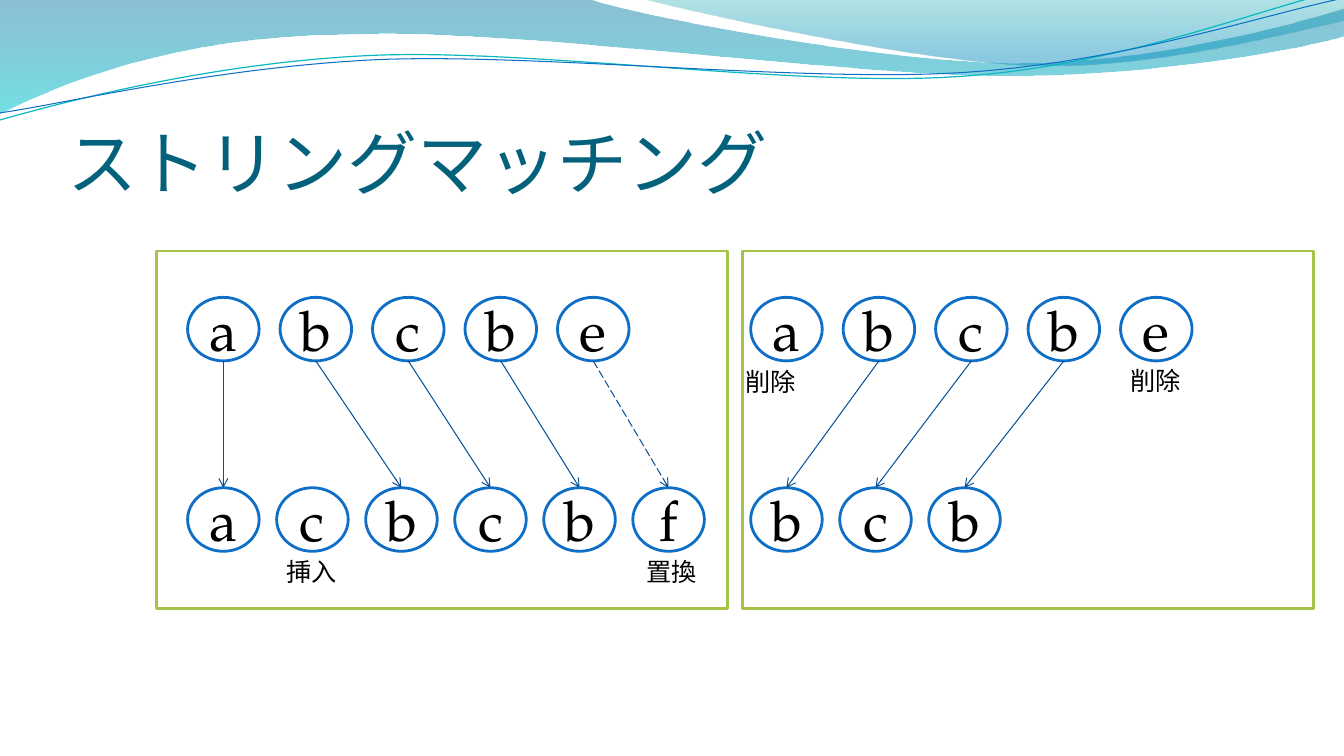
"""Build the string matching slide: two panels of aligned letters."""
from dataclasses import dataclass
from typing import Any, NamedTuple, Optional

from lxml.etree import SubElement
from pptx import Presentation
from pptx.dml.color import RGBColor
from pptx.enum.dml import MSO_LINE as Dash
from pptx.enum.shapes import MSO_CONNECTOR as Connector, MSO_SHAPE as Preset
from pptx.enum.text import MSO_ANCHOR as Anchor, MSO_AUTO_SIZE as Fit, PP_ALIGN as Align
from pptx.oxml.ns import qn
from pptx.util import Pt

BODY_FONT = "TeX Gyre Pagella"
CIRCLE_W, CIRCLE_H = 51.1, 45.4
TOP_Y, BOTTOM_Y = 212.4, 348.4
TOP_STEP, BOTTOM_STEP = 66.05, 63.6
PANEL_Y, PANEL_W, PANEL_H = 179.3, 408.2, 255.2

Point = tuple[float, float]


class Stop(NamedTuple):
    position: float
    color: str
    opacity: int


class Link(NamedTuple):
    source: int
    target: int
    dashed: bool = False


class Note(NamedTuple):
    text: str
    x: float
    y: float


@dataclass
class Wave:
    start: Point
    pieces: list[list[Point]]
    stops: tuple[Stop, ...] = ()
    line: Optional[tuple[str, float]] = None


@dataclass
class Panel:
    x: float
    row_x: float
    top: str
    bottom: str
    links: list[Link]
    notes: list[Note]


WAVES = [
    Wave((0, 0), [
        [(422.6, 0)],
        [(456.5, 12.2), (637.2, 45.4), (727.9, 45.4)],
        [(819.4, 45.4), (920.2, 18.7), (960, 6.5)],
        [(961, 25.9)],
        [(943.9, 31.7), (835.2, 54.7), (715.7, 54.4)],
        [(596.9, 54), (366.5, 20.2), (247, 24.8)],
        [(123.8, 25.9), (43.9, 59.8), (0, 81.4)],
    ], stops=(Stop(0, "0074A1", 45), Stop(1, "00C6CF", 55))),
    Wave((460, 0), [
        [(488.9, 7.9), (654.5, 44.6), (738, 46.8)],
        [(821.5, 49.7), (923, 23), (960, 15.1)],
        [(960, 0)],
    ], stops=(Stop(0, "00A1A9", 30), Stop(0.8, "008BBF", 45))),
    Wave((0, 85.7), [
        [(46, 72.7), (151.9, 44.6), (265.7, 39.6)],
        [(379.4, 34.6), (568.8, 62.6), (684, 54.7)],
        [(799.2, 47.5), (901.4, 5.8), (958.3, -7.2)],
    ], line=("0AB8BF", 0.85)),
    Wave((0, 80.6), [
        [(45.4, 74.2), (157, 47.5), (272.2, 42.5)],
        [(386.6, 38.2), (573.1, 59), (687.6, 51.8)],
        [(802.8, 44.6), (903.6, 10.1), (960, -1.4)],
    ], line=("0F6FC6", 0.75)),
]

PANELS = [
    Panel(111.6, 134, "abcbe", "acbcbf",
          [Link(0, 0), Link(1, 2), Link(2, 3), Link(3, 4), Link(4, 5, dashed=True)],
          [Note("挿入", 197.7, 393.8), Note("置換", 454.6, 393.8)]),
    Panel(530.2, 536.2, "abcbe", "bcb",
          [Link(1, 0), Link(2, 1), Link(3, 2)],
          [Note("削除", 525.6, 257.8), Note("削除", 800.6, 257.3)]),
]


def rgb(value: str) -> RGBColor:
    return RGBColor.from_string(value)


def assign(target: Any, values: dict[str, Any]) -> None:
    for name, value in values.items():
        setattr(target, name, value)


def set_line(line: Any, color: str, width: float) -> None:
    line.color.rgb = rgb(color)
    line.width = Pt(width)


def write(para: Any, text: str, size: float, font: str = BODY_FONT, color: str = "000000") -> None:
    span = para.add_run()
    span.text = text
    assign(span.font, {"size": Pt(size), "name": font})
    span.font.color.rgb = rgb(color)


def bend(shape: Any, pieces: list[list[Point]]) -> None:
    segments = iter(list(shape._element.spPr.iter(qn("a:lnTo"))))
    for piece in pieces:
        first, *others = [next(segments) for _ in piece]
        if others:
            first.tag = qn("a:cubicBezTo")
        for other in others:
            first.append(other[0])
            other.getparent().remove(other)


def curve_outline(page: Any, wave: Wave) -> Any:
    points = [wave.start, *(point for piece in wave.pieces for point in piece)]
    vertices = [(Pt(x), Pt(y)) for x, y in points]
    builder = page.shapes.build_freeform(*vertices[0])
    builder.add_line_segments(vertices[1:], close=bool(wave.stops))
    shape = builder.convert_to_shape()
    bend_path = shape._element.spPr.find(f".//{qn('a:path')}")
    for segment, piece in group_segments(bend_path, wave.pieces):
        if len(piece) == 3:
            replace_with_curve(bend_path, segment)
    return shape


def group_segments(outline: Any, pieces: list[list[Point]]) -> list[tuple[list[Any], list[Point]]]:
    segments = iter(outline.findall(qn("a:lnTo")))
    return [([next(segments) for _ in piece], piece) for piece in pieces]


def replace_with_curve(outline: Any, segments: list[Any]) -> None:
    curve = SubElement(outline, qn("a:cubicBezTo"))
    segments[0].addprevious(curve)
    for segment in segments:
        curve.append(segment[0])
        outline.remove(segment)


def draw_wave(page: Any, wave: Wave) -> None:
    shape = curve_outline(page, wave)
    shape.shadow.inherit = False
    if wave.line:
        shape.fill.background()
        set_line(shape.line, *wave.line)
        return
    shape.line.fill.background()
    shape.fill.gradient()
    shape.fill.gradient_angle = 270
    for mark, stop in zip(shape.fill.gradient_stops, wave.stops):
        mark.color.rgb = rgb(stop.color)
        mark.position = stop.position
    colors = shape._element.spPr.iter(qn("a:srgbClr"))
    for color, stop in zip(colors, wave.stops):
        SubElement(color, qn("a:alpha"), val=str(stop.opacity * 1000))


def draw_shape(page: Any, preset: Any, x: float, y: float, width: float, height: float, color: str) -> Any:
    shape = page.shapes.add_shape(preset, Pt(x), Pt(y), Pt(width), Pt(height))
    shape.shadow.inherit = False
    shape.fill.solid()
    shape.fill.fore_color.rgb = rgb("FFFFFF")
    set_line(shape.line, color, 2)
    return shape


def draw_row(page: Any, letters: str, x: float, y: float, step: float) -> None:
    for index, letter in enumerate(letters):
        circle = draw_shape(page, Preset.OVAL, x + index * step, y, CIRCLE_W, CIRCLE_H, "0F6FC6")
        circle.text_frame.vertical_anchor = Anchor.MIDDLE
        para = circle.text_frame.paragraphs[0]
        para.alignment = Align.CENTER
        write(para, letter, 40)


def draw_link(page: Any, link: Link, row_x: float) -> None:
    center = row_x + CIRCLE_W / 2
    arrow = page.shapes.add_connector(
        Connector.STRAIGHT, Pt(center + link.source * TOP_STEP), Pt(TOP_Y + CIRCLE_H),
        Pt(center + link.target * BOTTOM_STEP), Pt(BOTTOM_Y))
    set_line(arrow.line, "095295", 0.75)
    if link.dashed:
        arrow.line.dash_style = Dash.LONG_DASH
    properties = arrow._element.spPr
    SubElement(properties.find(qn("a:ln")), qn("a:tailEnd"), type="arrow")
    SubElement(properties, qn("a:effectLst"))


def draw_note(page: Any, note: Note) -> None:
    box = page.shapes.add_textbox(Pt(note.x), Pt(note.y), Pt(51.1), Pt(29))
    assign(box.text_frame, {"word_wrap": False, "auto_size": Fit.SHAPE_TO_FIT_TEXT})
    write(box.text_frame.paragraphs[0], note.text, 18)


def draw_title(page: Any, text: str) -> None:
    box = page.shapes.add_textbox(Pt(48), Pt(55.4), Pt(864), Pt(90))
    assign(box.text_frame, {"word_wrap": True, "vertical_anchor": Anchor.BOTTOM, "margin_left": 0,
                            "margin_top": Pt(3.6), "margin_right": 0, "margin_bottom": 0})
    write(box.text_frame.paragraphs[0], text, 50, "Calibri", "04617B")


def main() -> None:
    deck = Presentation()
    assign(deck, {"slide_width": Pt(960), "slide_height": Pt(540)})
    page = deck.slides.add_slide(deck.slide_layouts[6])
    for wave in WAVES:
        draw_wave(page, wave)
    draw_title(page, "ストリングマッチング")
    for panel in PANELS:
        draw_shape(page, Preset.RECTANGLE, panel.x, PANEL_Y, PANEL_W, PANEL_H, "A5C249")
        draw_row(page, panel.top, panel.row_x, TOP_Y, TOP_STEP)
        draw_row(page, panel.bottom, panel.row_x, BOTTOM_Y, BOTTOM_STEP)
        for link in panel.links:
            draw_link(page, link, panel.row_x)
        for note in panel.notes:
            draw_note(page, note)
    deck.save("out.pptx")


if __name__ == "__main__":
    main()
